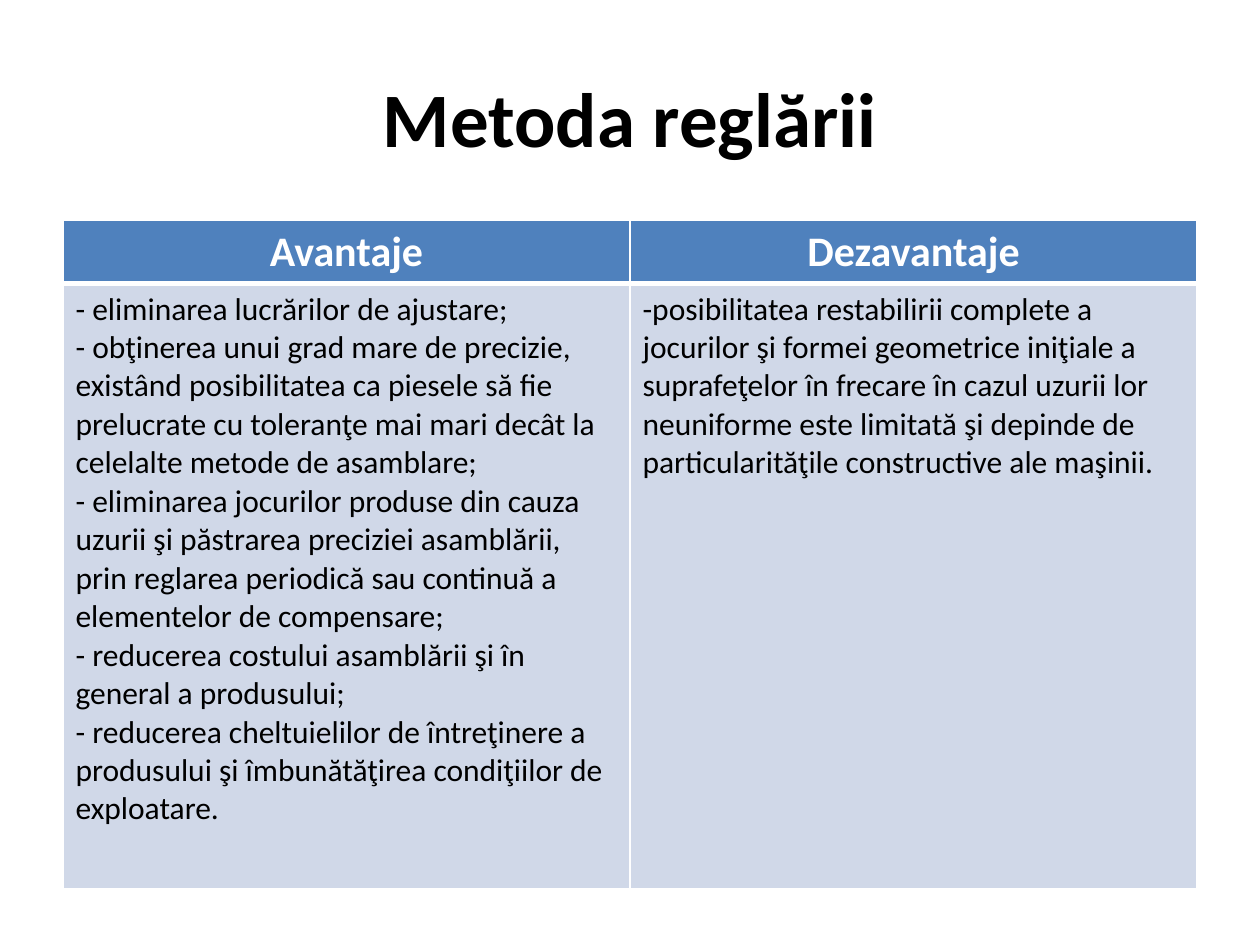
import pptx
import pptx.dml.color
import pptx.enum.text
import pptx.oxml
import pptx.oxml.ns
import pptx.util

Cm, Pt = pptx.util.Cm, pptx.util.Pt
RGBColor = pptx.dml.color.RGBColor
PP_ALIGN = pptx.enum.text.PP_ALIGN
ANCHOR = pptx.enum.text.MSO_ANCHOR

# Content
TITLE = "Metoda reglării"
COLUMNS = {
    "Avantaje": [
        "- eliminarea lucrărilor de ajustare;",
        "- obţinerea unui grad mare de precizie, existând posibilitatea ca piesele "
        "să fie prelucrate cu toleranţe mai mari decât la celelalte metode de asamblare;",
        "- eliminarea jocurilor produse din cauza uzurii şi păstrarea preciziei "
        "asamblării, prin reglarea periodică sau continuă a elementelor de compensare;",
        "- reducerea costului asamblării şi în general a produsului;",
        "- reducerea cheltuielilor de întreţinere a produsului şi îmbunătăţirea "
        "condiţiilor de exploatare.",
    ],
    "Dezavantaje": [
        "-posibilitatea restabilirii complete a jocurilor şi formei geometrice "
        "iniţiale a suprafeţelor în frecare în cazul uzurii lor neuniforme este "
        "limitată şi depinde de particularităţile constructive ale maşinii.",
    ],
}

# Style
FONT = "Calibri"
BLACK = RGBColor(0x00, 0x00, 0x00)
WHITE = RGBColor(0xFF, 0xFF, 0xFF)
BLUE = RGBColor(0x4F, 0x81, 0xBD)
PALE = RGBColor(0xD0, 0xD8, 0xE8)
MARGIN, WIDTH = Cm(1.27), Cm(22.86)
HEADER_H, BODY_H = Cm(1.25), Cm(12.2)


def write(tf, lines, size, color, bold, align):
    for i, line in enumerate(lines):
        p = tf.paragraphs[0] if i == 0 else tf.add_paragraph()
        p.alignment = align
        r = p.add_run()
        r.text = line
        r.font.name, r.font.size = FONT, Pt(size)
        r.font.bold, r.font.color.rgb = bold, color


def set_borders(cell, **widths):
    tc_pr = cell._tc.get_or_add_tcPr()
    for side in "LRTB":
        tc_pr.append(pptx.oxml.parse_xml(
            f'<a:ln{side} {pptx.oxml.ns.nsdecls("a")} w="{Pt(widths.get(side, 1))}">'
            f'<a:solidFill><a:srgbClr val="{WHITE}"/></a:solidFill></a:ln{side}>'))


def fill_cell(cell, fill, lines, size, color, bold, align, **widths):
    set_borders(cell, **widths)
    cell.fill.solid()
    cell.fill.fore_color.rgb = fill
    write(cell.text_frame, lines, size, color, bold, align)


prs = pptx.Presentation()
prs.slide_width, prs.slide_height = Cm(25.4), Cm(19.05)
s = prs.slides.add_slide(prs.slide_layouts[6])

# Title
tf = s.shapes.add_textbox(MARGIN, Cm(0.76), WIDTH, Cm(3.18)).text_frame
tf.word_wrap = True
tf.vertical_anchor = ANCHOR.MIDDLE
write(tf, [TITLE], 44, BLACK, True, PP_ALIGN.CENTER)

# Comparison table
table = s.shapes.add_table(2, len(COLUMNS), MARGIN, Cm(4.45), WIDTH,
                           HEADER_H + BODY_H).table
table.rows[0].height, table.rows[1].height = HEADER_H, BODY_H
for col, (heading, points) in enumerate(COLUMNS.items()):
    fill_cell(table.cell(0, col), BLUE, [heading], 24, WHITE, True,
              PP_ALIGN.CENTER, B=3)
    fill_cell(table.cell(1, col), PALE, points, 18, BLACK, False,
              PP_ALIGN.LEFT, T=3)

prs.save("out.pptx")
